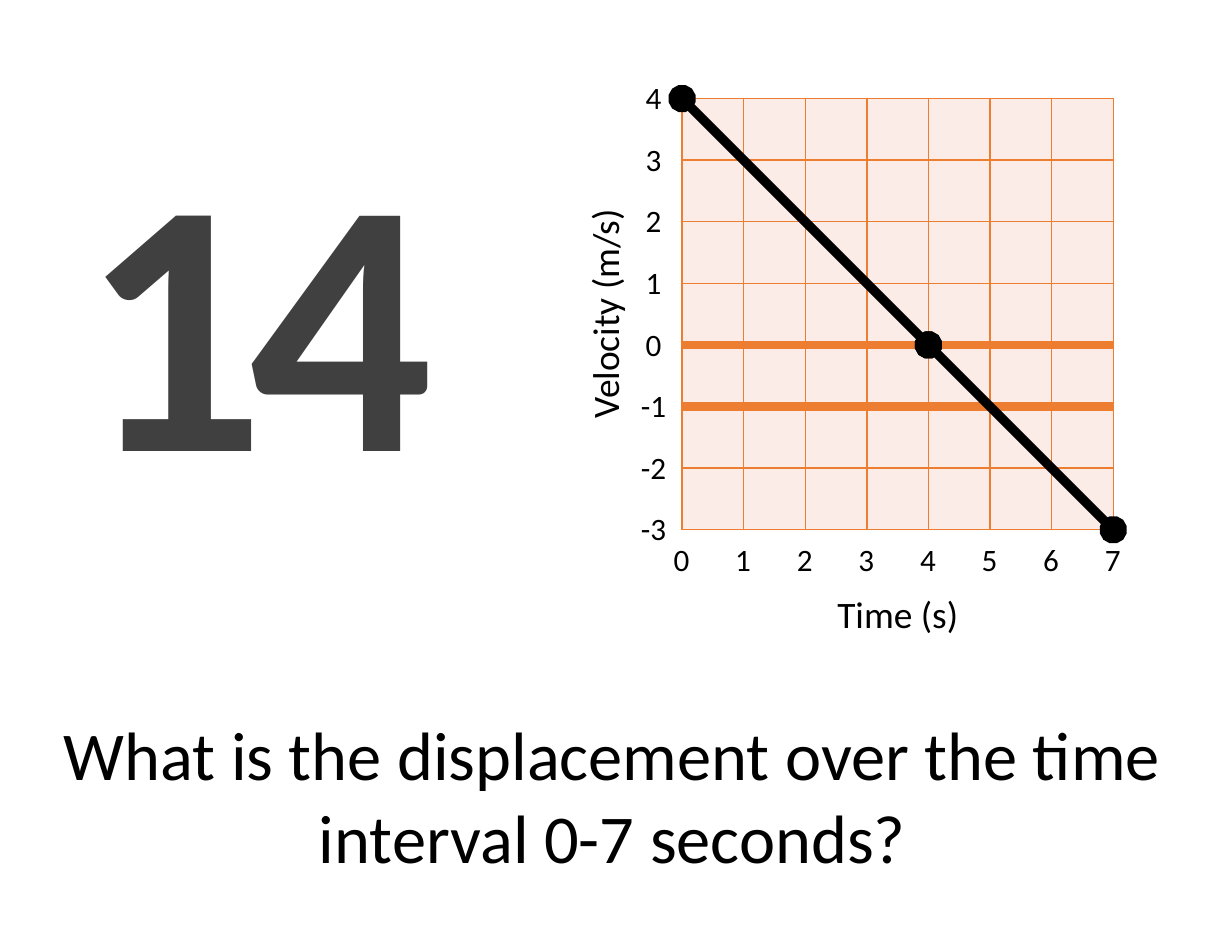
from lxml.etree import SubElement
from pptx import Presentation
from pptx.dml.color import RGBColor
from pptx.enum.shapes import MSO_CONNECTOR
from pptx.enum.text import MSO_ANCHOR, PP_ALIGN
from pptx.oxml import parse_xml
from pptx.oxml.ns import nsdecls, qn
from pptx.util import Inches, Pt

COLORS = {"ink": "000000", "number": "404040", "grid": "ED7D31", "paper": "FCECE8"}
FONT = "Calibri"
UNIT = 0.55  # inches per grid square
NO_STYLE = "{2D5ABB26-0587-4C30-8999-92F81FD0307C}"

# Graph, measured in grid squares
LEFT, TOP, SPAN = 11.07, 1.6, 7
MAX_VELOCITY = 4
THIN, THICK = 1, 6


def color(name):
    return RGBColor.from_string(COLORS[name])


def write(frame, text, size=20, ink="ink", bold=False, spacing=None, tracking=None):
    paragraph = frame.paragraphs[0]
    paragraph.alignment = PP_ALIGN.CENTER
    if spacing:
        paragraph.line_spacing = spacing
    run = paragraph.add_run()
    run.text = text
    run.font.name, run.font.size, run.font.bold = FONT, Pt(size), bold
    run.font.color.rgb = color(ink)
    if tracking:
        run.font._element.set("spc", str(tracking * 100))


class GridSlide:
    """A slide whose lengths are columns and rows of grid squares."""

    def __init__(self, deck):
        self.slide = deck.slides.add_slide(deck.slide_layouts[5])
        self.shapes = self.slide.shapes

    def box(self, *squares):
        return [Inches(round(n * UNIT, 2)) for n in squares]

    def title(self, text, area, **style):
        question = self.shapes.title
        question.left, question.top, question.width, question.height = self.box(*area)
        question.text_frame.vertical_anchor = MSO_ANCHOR.MIDDLE
        write(question.text_frame, text, **style)

    def text(self, text, area, anchor=MSO_ANCHOR.TOP, rotation=0, **style):
        label = self.shapes.add_textbox(*self.box(*area))
        label.rotation = rotation
        label.text_frame.word_wrap = True
        label.text_frame.vertical_anchor = anchor
        write(label.text_frame, text, **style)

    def table(self, col, row, columns, rows):
        frame = self.shapes.add_table(rows, columns, *self.box(col, row, columns, rows))
        table = frame.table
        table.first_row = table.horz_banding = False
        table._tbl.tblPr.find(qn("a:tableStyleId")).text = NO_STYLE
        for line in (*table.columns, ):
            line.width = Inches(UNIT)
        for line in table.rows:
            line.height = Inches(UNIT)
        return table

    def borders(self, cell, **widths):
        properties = cell._tc.get_or_add_tcPr()
        for place, side in enumerate("LRTB"):
            width = Pt(widths.get(side, THIN))
            properties.insert(place, parse_xml(
                f'<a:ln{side} {nsdecls("a")} w="{width}"><a:solidFill>'
                f'<a:srgbClr val="{COLORS["grid"]}"/></a:solidFill></a:ln{side}>'))

    def squares(self, thick_sides):
        table = self.table(LEFT, TOP, SPAN, SPAN)
        for row in range(SPAN):
            for col in range(SPAN):
                cell = table.cell(row, col)
                cell.fill.solid()
                cell.fill.fore_color.rgb = color("paper")
                self.borders(cell, **thick_sides.get(row, {}))

    def scale(self, values, col, row, vertical=False):
        count = len(values)
        size = (1, count) if vertical else (count, 1)
        table = self.table(col, row, *size)
        for cell, value in zip(table.iter_cells(), values):
            cell.fill.background()
            cell.vertical_anchor = MSO_ANCHOR.MIDDLE
            write(cell.text_frame, str(value))

    def segment(self, start, end):
        ends = [n for time, velocity in (start, end)
                for n in (LEFT + time, TOP + MAX_VELOCITY - velocity)]
        line = self.shapes.add_connector(MSO_CONNECTOR.STRAIGHT, *self.box(*ends))
        line.line.color.rgb = color("ink")
        line.line.width = Pt(THICK)
        outline = line.line._get_or_add_ln()
        for tip in ("a:headEnd", "a:tailEnd"):
            SubElement(outline, qn(tip), type="oval")
        SubElement(line._element.spPr, qn("a:effectLst"))


def main():
    deck = Presentation()
    deck.slide_width, deck.slide_height = Inches(11), Inches(8.5)
    page = GridSlide(deck)

    # Question and its number
    page.title("What is the displacement over the time interval 0-7 seconds?",
               (0.8, 11.27, 18.29, 3.25), size=44)
    page.text("14", (0.8, TOP, 6.76, 7.64), anchor=MSO_ANCHOR.MIDDLE,
              size=233, ink="number", bold=True, spacing=0.9, tracking=-10)

    # Graph paper: heavy lines at velocity 0 and -1
    page.squares({3: {"B": THICK}, 4: {"T": THICK, "B": THICK}, 5: {"T": THICK}})

    # Velocity over time
    turning_point = (4, 0)
    for end in ((0, 4), (7, -3)):
        page.segment(end, turning_point)

    # Scales, centred on the grid lines
    page.scale(range(SPAN + 1), LEFT - 0.5, TOP + SPAN)
    page.scale(range(MAX_VELOCITY, MAX_VELOCITY - SPAN - 1, -1),
               LEFT - 0.97, TOP - 0.5, vertical=True)

    # Axis names
    page.text("Time (s)", (LEFT, 9.5, SPAN, 0.9), size=24)
    page.text("Velocity (m/s)", (6.3, 4.63, SPAN, 0.9), rotation=270, size=24)

    deck.save("out.pptx")


if __name__ == "__main__":
    main()
